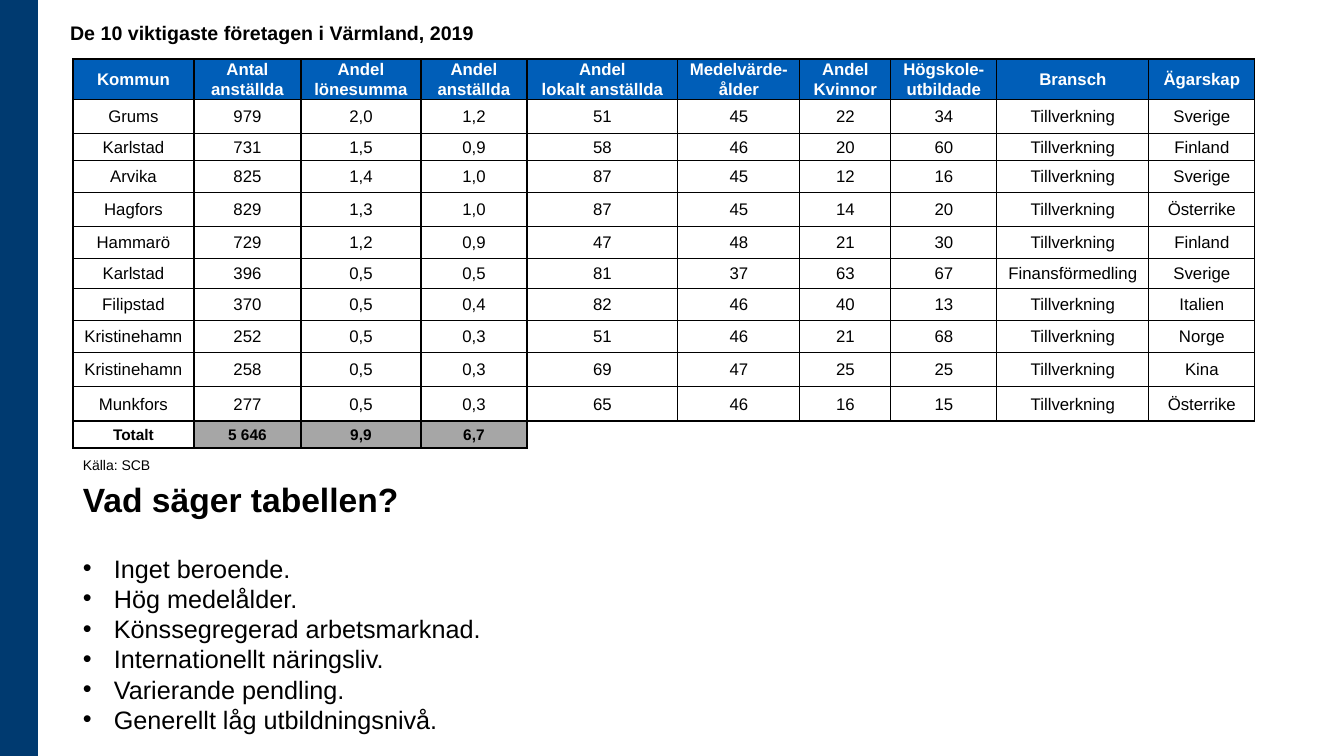
from lxml.etree import SubElement
from pptx import Presentation
from pptx.dml.color import RGBColor
from pptx.enum.shapes import MSO_SHAPE
from pptx.enum.text import MSO_ANCHOR, MSO_AUTO_SIZE, PP_ALIGN
from pptx.oxml.ns import qn
from pptx.util import Emu, Inches, Pt

PIXEL = 914400 / 100.8
BLACK = "000000"


def px(count):
    return Emu(round(count * PIXEL))


def set_font(paragraph, size, bold=False, color=BLACK):
    font = paragraph.font
    font.name, font.size, font.bold = "Arial", Pt(size), bold
    font.color.rgb = RGBColor.from_string(color)


presentation = Presentation()
presentation.slide_width, presentation.slide_height = px(1344), px(756)
slide = presentation.slides.add_slide(presentation.slide_layouts[5])

# Left band
band = slide.shapes.add_shape(MSO_SHAPE.RECTANGLE, 0, 0, px(38), px(756))
band.shadow.inherit = False
band.fill.solid()
band.fill.fore_color.rgb = RGBColor.from_string("003A70")
band.line.fill.background()

# Title
title = slide.shapes.title
title.left, title.top, title.width, title.height = px(60), px(13), px(941), px(37)
title.text_frame.vertical_anchor = MSO_ANCHOR.BOTTOM
paragraph = title.text_frame.paragraphs[0]
paragraph.text = "De 10 viktigaste företagen i Värmland, 2019"
paragraph.alignment = PP_ALIGN.LEFT
set_font(paragraph, 14, bold=True)

# Company table
rows = [
    ["Kommun", "Antal\nanställda", "Andel\nlönesumma", "Andel anställda",
     "Andel\nlokalt anställda", "Medelvärde-ålder", "Andel\nKvinnor",
     "Högskole-utbildade", "Bransch", "Ägarskap"],
    ["Grums", "979", "2,0", "1,2", "51", "45", "22", "34", "Tillverkning", "Sverige"],
    ["Karlstad", "731", "1,5", "0,9", "58", "46", "20", "60", "Tillverkning", "Finland"],
    ["Arvika", "825", "1,4", "1,0", "87", "45", "12", "16", "Tillverkning", "Sverige"],
    ["Hagfors", "829", "1,3", "1,0", "87", "45", "14", "20", "Tillverkning", "Österrike"],
    ["Hammarö", "729", "1,2", "0,9", "47", "48", "21", "30", "Tillverkning", "Finland"],
    ["Karlstad", "396", "0,5", "0,5", "81", "37", "63", "67", "Finansförmedling", "Sverige"],
    ["Filipstad", "370", "0,5", "0,4", "82", "46", "40", "13", "Tillverkning", "Italien"],
    ["Kristinehamn", "252", "0,5", "0,3", "51", "46", "21", "68", "Tillverkning", "Norge"],
    ["Kristinehamn", "258", "0,5", "0,3", "69", "47", "25", "25", "Tillverkning", "Kina"],
    ["Munkfors", "277", "0,5", "0,3", "65", "46", "16", "15", "Tillverkning", "Österrike"],
    ["Totalt", "5 646", "9,9", "6,7", "", "", "", "", "", ""],
]
column_widths = [121, 107, 120, 106, 151, 122, 91, 106, 152, 106]
row_heights = [40, 34, 27, 32, 34, 32, 30, 32, 32, 34, 35, 27]
total_row = len(rows) - 1
table = slide.shapes.add_table(len(rows), len(column_widths), px(73), px(59),
                               px(sum(column_widths)), px(sum(row_heights))).table
table.horz_banding = False
for column, width in zip(table.columns, column_widths):
    column.width = px(width)
for row, height in zip(table.rows, row_heights):
    row.height = px(height)

for row_index, texts in enumerate(rows):
    for column_index, text in enumerate(texts):
        cell = table.cell(row_index, column_index)
        cell.vertical_anchor = MSO_ANCHOR.MIDDLE
        cell.margin_left = cell.margin_right = Inches(0.06)
        cell.margin_top = cell.margin_bottom = 0

        # Borders: cells without text keep only those shared with filled cells
        edges = {"lnL", "lnR", "lnT", "lnB"}
        if not text:
            edges = {"lnT", "lnL"} if texts[column_index - 1] else {"lnT"}
        properties = cell._tc.get_or_add_tcPr()
        for edge in ("lnL", "lnR", "lnT", "lnB"):
            line = SubElement(properties, qn(f"a:{edge}"), w=str(Pt(1)))
            if edge in edges:
                fill = SubElement(line, qn("a:solidFill"))
                SubElement(fill, qn("a:srgbClr"), val=BLACK)
            else:
                SubElement(line, qn("a:noFill"))

        fill_color = None
        if row_index == 0:
            fill_color = "005EB8"
        elif row_index == total_row and text and column_index > 0:
            fill_color = "A6A6A6"
        if fill_color:
            cell.fill.solid()
            cell.fill.fore_color.rgb = RGBColor.from_string(fill_color)
        else:
            cell.fill.background()

        paragraph = cell.text_frame.paragraphs[0]
        paragraph.text = text
        paragraph.alignment = PP_ALIGN.CENTER
        paragraph.line_spacing = 1.07
        paragraph.space_after = Pt(8)
        set_font(paragraph, 11 if row_index == total_row else 12,
                 bold=row_index in (0, total_row),
                 color="FFFFFF" if row_index == 0 else BLACK)

# Source line
source_box = slide.shapes.add_textbox(px(73), px(450), px(100), px(27))
source_box.text_frame.word_wrap = True
paragraph = source_box.text_frame.paragraphs[0]
paragraph.text = "Källa: SCB"
paragraph.line_spacing = 1.07
set_font(paragraph, 10)

# Conclusions
conclusions = ["Inget beroende.", "Hög medelålder.", "Könssegregerad arbetsmarknad.",
               "Internationellt näringsliv.", "Varierande pendling.",
               "Generellt låg utbildningsnivå."]
conclusion_box = slide.shapes.add_textbox(px(73), px(474), px(539), px(272))
frame = conclusion_box.text_frame
frame.word_wrap = True
frame.auto_size = MSO_AUTO_SIZE.SHAPE_TO_FIT_TEXT
heading = frame.paragraphs[0]
heading.text = "Vad säger tabellen?"
heading.space_after = Pt(24)
set_font(heading, 24, bold=True)
for conclusion in conclusions:
    paragraph = frame.add_paragraph()
    paragraph.text = conclusion
    properties = paragraph._p.get_or_add_pPr()
    properties.set("marL", str(px(31)))
    properties.set("indent", str(px(-31)))
    SubElement(properties, qn("a:buFont"), typeface="Arial")
    SubElement(properties, qn("a:buChar"), char="•")
    set_font(paragraph, 18)

presentation.save("out.pptx")
